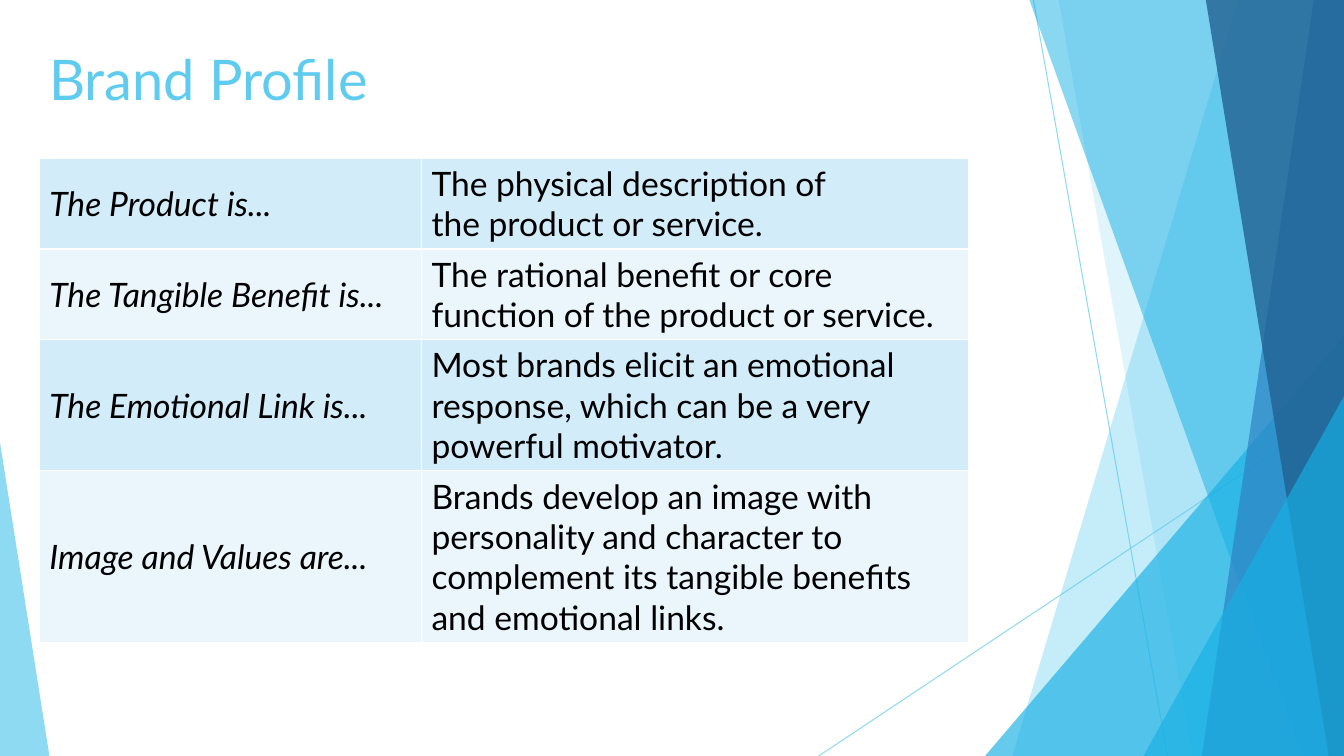
from lxml.etree import SubElement
from pptx import Presentation
from pptx.dml.color import RGBColor
from pptx.enum.shapes import MSO_CONNECTOR, MSO_SHAPE
from pptx.enum.text import MSO_ANCHOR
from pptx.oxml.ns import qn
from pptx.util import Inches, Pt

SKY = RGBColor(0x5F, 0xCB, 0xEF)
CYAN = RGBColor(0x17, 0xB0, 0xE4)
BLUE = RGBColor(0x2E, 0x83, 0xC3)
NAVY = RGBColor(0x22, 0x62, 0x92)
BLACK = RGBColor(0, 0, 0)
WHITE = RGBColor(0xFF, 0xFF, 0xFF)
BANDS = (RGBColor(0xD2, 0xEC, 0xF9), RGBColor(0xEA, 0xF6, 0xFC))
FONT = "Lato"
W, H = 13.33, 7.5
MARGIN = 0.39


def set_opacity(fill_parent, percent):
    """Make the solid fill inside an spPr, or its line, partly transparent."""
    color = fill_parent.find(qn("a:solidFill"))[0]
    SubElement(color, qn("a:alpha")).set("val", str(percent * 1000))


def paint(sp, color, percent):
    sp.shadow.inherit = False
    sp.fill.solid()
    sp.fill.fore_color.rgb = color
    set_opacity(sp._element.spPr, percent)
    sp.line.fill.background()


prs = Presentation()
prs.slide_width, prs.slide_height = Inches(W), Inches(H)
s = prs.slides.add_slide(prs.slide_layouts[6])

# Thin lines behind the facets
for x1, y1, x2 in ((10.25, 0, 11.58), (W, 4.03, 8.12)):
    line = s.shapes.add_connector(
        MSO_CONNECTOR.STRAIGHT, Inches(x1), Inches(y1), Inches(x2), Inches(H))
    line.line.color.rgb = SKY
    line.line.width = Pt(0.75)
    set_opacity(line.line._ln, 70)
    SubElement(line._element.spPr, qn("a:effectLst"))

# Facets, back to front. A "band" runs from a slanted left edge (top x, bottom x)
# to the right of the slide; a "corner" is a right triangle (left, top, width, peak).
facets = (
    ("band", (12.28, 10.04), SKY, 36),
    ("band", (10.5, 11.83), SKY, 20),
    ("corner", (9.77, 3.33, 3.56, 1), CYAN, 66),
    ("band", (10.21, 12.91), CYAN, 50),
    ("band", (13.03, 11.92), BLUE, 70),
    ("band", (11.96, 13.18), NAVY, 80),
    ("corner", (11.34, 3.93, 1.99, 1), CYAN, 66),
    ("corner", (0, 4.39, 0.49, 0), SKY, 70),
)
for kind, place, color, percent in facets:
    if kind == "band":
        top_x, bottom_x = place
        outline = s.shapes.build_freeform(Inches(top_x), 0)
        outline.add_line_segments(
            [(Inches(x), Inches(y)) for x, y in ((W, 0), (W, H), (bottom_x, H))])
        sp = outline.convert_to_shape()
    else:
        left, top, width, peak = place
        sp = s.shapes.add_shape(MSO_SHAPE.ISOSCELES_TRIANGLE, Inches(left),
                                Inches(top), Inches(width), Inches(H - top))
        sp.adjustments[0] = peak
    paint(sp, color, percent)

# Title
title = s.shapes.add_textbox(Inches(MARGIN), Inches(MARGIN), Inches(7.5), Inches(1.25))
tf = title.text_frame
tf.word_wrap = True
p = tf.paragraphs[0]
p.text = "Brand Profile"
p.font.name, p.font.size, p.font.color.rgb = FONT, Pt(40), SKY

# Table
rows = (
    ("The Product is...", "The physical description of \nthe product or service.", 0.9),
    ("The Tangible Benefit is...",
     "The rational benefit or core function of the product or service.", 0.9),
    ("The Emotional Link is...",
     "Most brands elicit an emotional response, which can be a very powerful motivator.",
     1.3),
    ("Image and Values are...",
     "Brands develop an image with personality and character to complement "
     "its tangible benefits and emotional links.", 1.7),
)
col_widths = (3.79, 5.43)
table = s.shapes.add_table(
    len(rows), len(col_widths), Inches(MARGIN), Inches(1.57),
    Inches(sum(col_widths)), Inches(sum(row[-1] for row in rows))).table
table.first_row = False
for column, width in zip(table.columns, col_widths):
    column.width = Inches(width)

for i, (*texts, height) in enumerate(rows):
    table.rows[i].height = Inches(height)
    for j, text in enumerate(texts):
        cell = table.cell(i, j)
        cell.vertical_anchor = MSO_ANCHOR.MIDDLE
        p = cell.text_frame.paragraphs[0]
        p.text = text
        for r in p.runs:
            r.font.name, r.font.size, r.font.italic = FONT, Pt(24), j == 0
            r.font.color.rgb = BLACK
        tc_pr = cell._tc.get_or_add_tcPr()
        for side in "LRTB":
            border = SubElement(tc_pr, qn(f"a:ln{side}"), w=str(Pt(1)))
            solid = SubElement(border, qn("a:solidFill"))
            SubElement(solid, qn("a:srgbClr"), val=str(WHITE))
        cell.fill.solid()
        cell.fill.fore_color.rgb = BANDS[i % 2]

prs.save("out.pptx")
